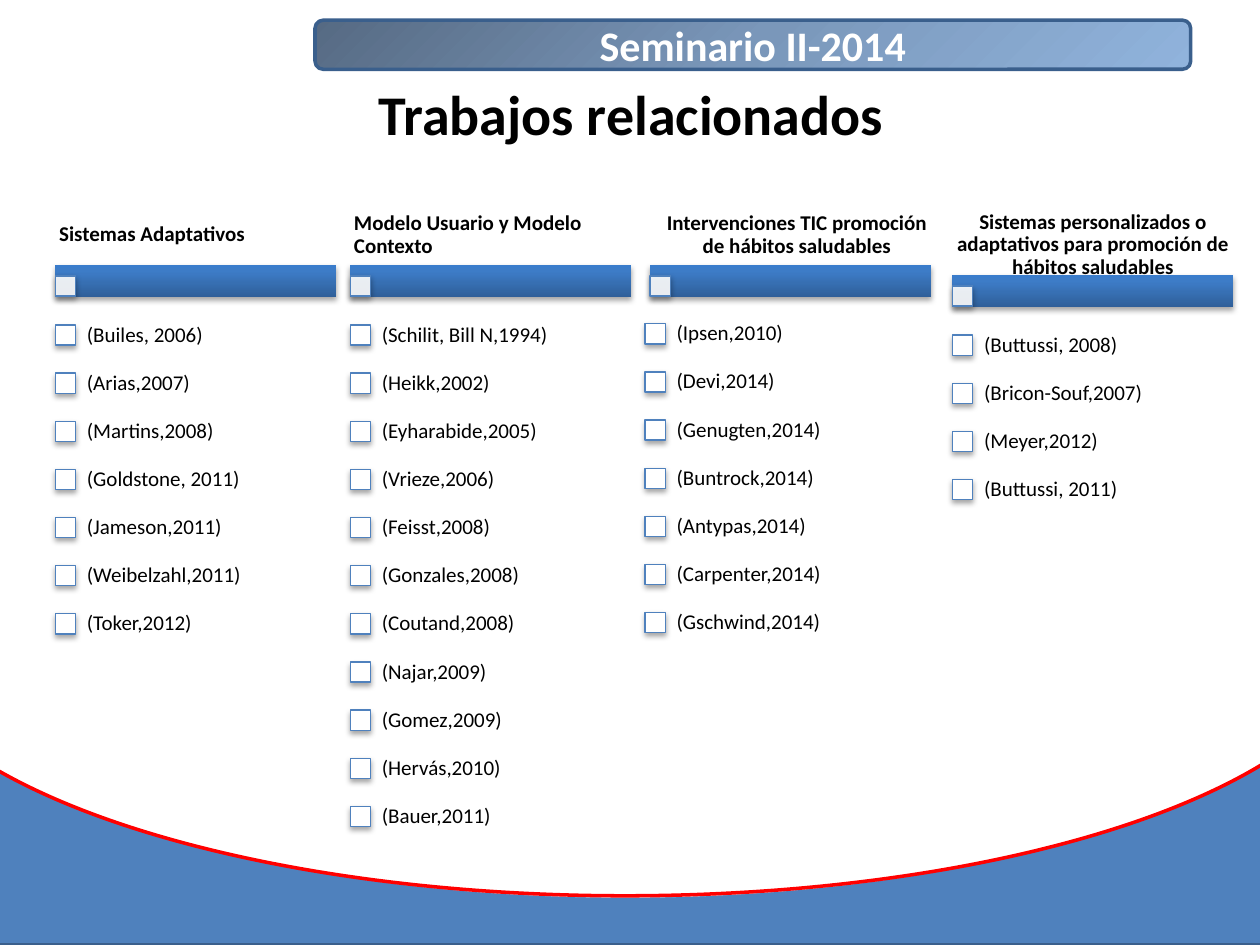
from lxml import etree
from pptx import Presentation
from pptx.dml.color import RGBColor
from pptx.enum.shapes import MSO_SHAPE
from pptx.enum.text import MSO_ANCHOR, PP_ALIGN
from pptx.oxml.ns import qn
from pptx.util import Inches, Pt

RECT, OVAL, ROUND = MSO_SHAPE.RECTANGLE, MSO_SHAPE.OVAL, MSO_SHAPE.ROUNDED_RECTANGLE
LEFT, CENTER, MIDDLE = PP_ALIGN.LEFT, PP_ALIGN.CENTER, MSO_ANCHOR.MIDDLE

# Content
BANNER = "Seminario II-2014"
TITLE = "Trabajos relacionados"
COLUMNS = [
    {"head": "Sistemas Adaptativos", "align": LEFT,
     "works": ["(Builes, 2006)", "(Arias,2007)", "(Martins,2008)", "(Goldstone, 2011)",
               "(Jameson,2011)", "(Weibelzahl,2011)", "(Toker,2012)"]},
    {"head": "Modelo Usuario y Modelo Contexto", "align": LEFT,
     "works": ["(Schilit, Bill N,1994)", "(Heikk,2002)", "(Eyharabide,2005)",
               "(Vrieze,2006)", "(Feisst,2008)", "(Gonzales,2008)", "(Coutand,2008)",
               "(Najar,2009)", "(Gomez,2009)", "(Hervás,2010)", "(Bauer,2011)"]},
    {"head": "Intervenciones TIC promoción de hábitos saludables", "align": CENTER,
     "nudge": 0.04, "extra": 0.1, "lift": 0.01,
     "works": ["(Ipsen,2010)", "(Devi,2014)", "(Genugten,2014)", "(Buntrock,2014)",
               "(Antypas,2014)", "(Carpenter,2014)", "(Gschwind,2014)"]},
    {"head": "Sistemas personalizados o adaptativos para promoción de hábitos saludables",
     "align": CENTER, "shift": 0.1, "drop": 0.08, "tall": 0.16,
     "works": ["(Buttussi, 2008)", "(Bricon-Souf,2007)", "(Meyer,2012)",
               "(Buttussi, 2011)"]},
]
BLUE, EDGE, WHITE, RED, BLACK = "4F81BD", "3A5F8C", "FFFFFF", "FF0000", "000000"
BACK = [  # kind, box, fill, line
    (RECT, (-0.94, 3.83, 12.11, 3.67), BLUE, EDGE),
    (OVAL, (-1.09, 2.42, 12.11, 4.69), WHITE, WHITE),
    (OVAL, (-0.94, 2.81, 11.8, 4.3), None, RED),
    (RECT, (-0.94, 0, 12.11, 5.86), WHITE, WHITE),
]
BAR_FADE = [(0, "2F5F99"), (80, "3D7CC7"), (100, "3A7CCB")]
TOP_FADE = [(0, "566A83"), (50, "7A97BA"), (100, "90B3DC")]

# Grid, in inches
START, STEP, WIDE = 0.44, 2.34, 2.23
HEAD, BAR, LIST = 1.55, 2.1, 2.58
ROW, BOX = 3.82 / 10, 0.16

deck = Presentation()
deck.slide_width, deck.slide_height = Inches(10), Inches(7.5)
slide = deck.slides.add_slide(deck.slide_layouts[5])
shapes = slide.shapes


def color(code):
    return RGBColor.from_string(code)


def add_sub(parent, tag, **attrs):
    return etree.SubElement(parent, qn(tag), attrs)


def fade(shape, stops, angle):
    shape.fill.gradient()
    shape.fill.gradient_angle = angle
    stop_list = shape._element.spPr.find(qn("a:gradFill")).find(qn("a:gsLst"))
    for old in list(stop_list):
        stop_list.remove(old)
    for pos, code in stops:
        stop = add_sub(stop_list, "a:gs", pos=str(pos * 1000))
        add_sub(stop, "a:srgbClr", val=code)


def draw(kind, box, fill=None, line=None, width=2, shade=False):
    shape = shapes.add_shape(kind, *map(Inches, box))
    shape.shadow.inherit = False
    if fill:
        shape.fill.solid()
        shape.fill.fore_color.rgb = color(fill)
    else:
        shape.fill.background()
    if line:
        shape.line.color.rgb = color(line)
        shape.line.width = Pt(width)
    else:
        shape.line.fill.background()
    if shade:
        effects = shape._element.spPr.find(qn("a:effectLst"))
        outer = add_sub(effects, "a:outerShdw", blurRad=str(Pt(3.1)), dist=str(Pt(1.8)),
                        dir="5400000", rotWithShape="0")
        tone = add_sub(outer, "a:srgbClr", val=BLACK)
        add_sub(tone, "a:alpha", val="35000")
    return shape


def write(shape, text, size, align=LEFT, bold=False, tone=BLACK, pad=None, lead=None):
    frame = shape.text_frame
    form = {"word_wrap": True, "vertical_anchor": MIDDLE}
    if pad:
        side, edge = map(Inches, pad)
        form.update(margin_left=side, margin_right=side, margin_top=edge, margin_bottom=edge)
    for key, value in form.items():
        setattr(frame, key, value)
    frame.text = text
    para = frame.paragraphs[0]
    para.alignment = align
    if lead:
        para.line_spacing = lead
    font = para.runs[0].font
    for key, value in {"name": "Calibri", "size": Pt(size), "bold": bold}.items():
        setattr(font, key, value)
    font.color.rgb = color(tone)


def label(box, text, **form):
    write(shapes.add_textbox(*map(Inches, box)), text, 12, lead=0.9, **form)


def marker(x, y):
    return draw(RECT, (x, y, BOX, BOX), WHITE, BLUE, 0.75, True)


# Curved backdrop and banner
for part in BACK:
    draw(*part)
banner = draw(ROUND, (2.5, 0.16, 6.95, 0.39), line=EDGE)
fade(banner, TOP_FADE, 315)
write(banner, BANNER, 24, CENTER, True, WHITE)

# Title, brought in front of the backdrop
title = shapes.title
title.left, title.top, title.width, title.height = map(Inches, (0.51, 0.44, 9, 0.91))
write(title, TITLE, 32, CENTER, True)
shapes._spTree.append(title._element)

# Columns of related works
for num, col in enumerate(COLUMNS):
    x = START + num * STEP + col.get("shift", 0)
    left, drop = x + col.get("nudge", 0), col.get("drop", 0)
    bar = draw(RECT, (left, BAR + drop, WIDE, 0.26), shade=True)
    fade(bar, BAR_FADE, 90)
    tick = marker(left, BAR + drop + 0.09)
    tone = tick._element.spPr.find(qn("a:solidFill")).find(qn("a:srgbClr"))
    add_sub(tone, "a:alpha", val="90000")
    label((left, HEAD, WIDE + col.get("extra", 0), 0.63 + col.get("tall", 0)), col["head"],
          align=col["align"], bold=True, pad=(0.03, 0.02))
    for row, work in enumerate(col["works"]):
        y = LIST + drop - col.get("lift", 0) + row * ROW
        marker(x, y)
        label((x + BOX, y - 0.11, WIDE - BOX, ROW), work, pad=(0.09, 0.09))

deck.save("out.pptx")
